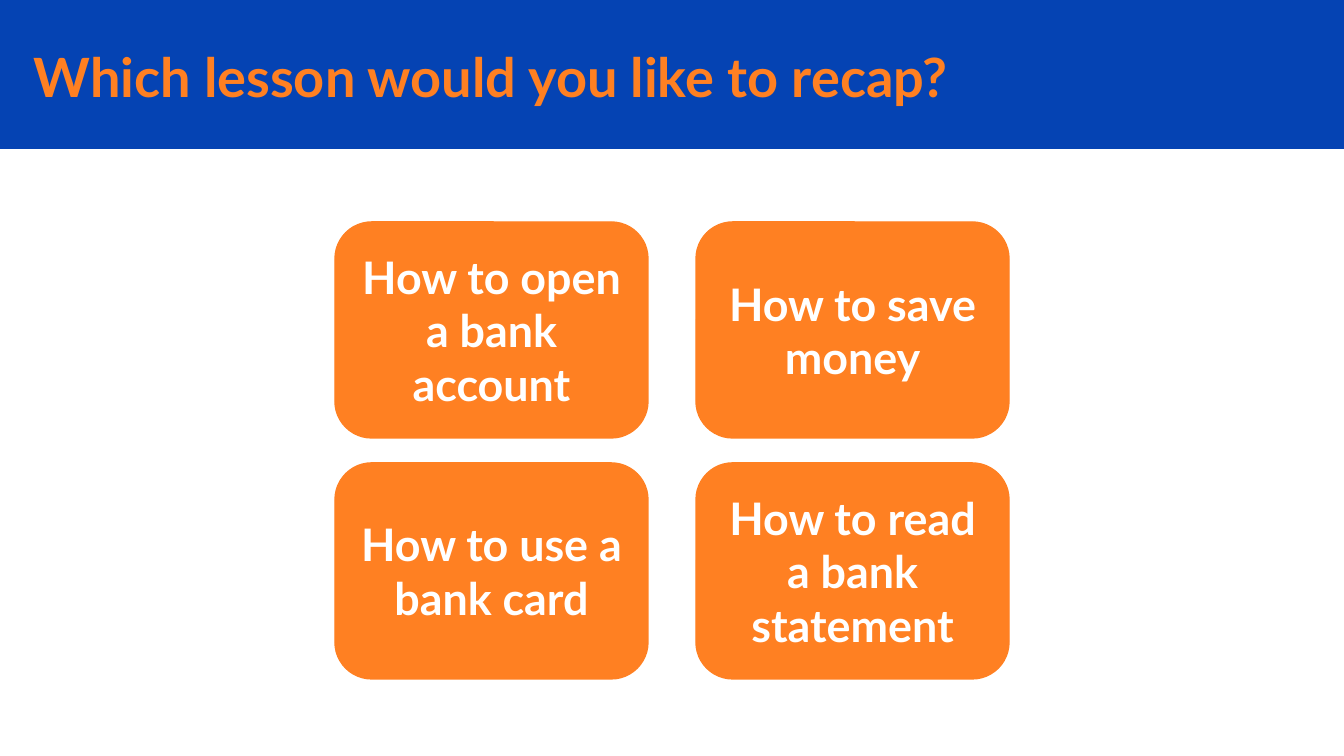
from pptx import Presentation
from pptx.dml.color import RGBColor
from pptx.enum.shapes import MSO_SHAPE
from pptx.enum.text import MSO_ANCHOR, PP_ALIGN
from pptx.util import Inches, Pt

# Content
TITLE = "Which lesson would you like to recap?"
LESSONS = [
    ["How to open a bank account", "How to save money"],
    ["How to use a bank card", "How to read a bank statement"],
]

BLUE = RGBColor(0x05, 0x43, 0xB3)
ORANGE = RGBColor(0xFF, 0x80, 0x22)
WHITE = RGBColor(0xFF, 0xFF, 0xFF)

# Layout in px
PX = 914400 / 134.4
SLIDE_W, SLIDE_H = 1344, 756
BANNER_H = 149
CARD_W, CARD_H = 313, 216
GAP_X, GAP_Y = 48, 25
CARDS_TOP = 222
CARDS_LEFT = (SLIDE_W - 2 * CARD_W - GAP_X) // 2


def px(*lengths):
    return [round(length * PX) for length in lengths]


def write(shape, text, size, color, align):
    frame = shape.text_frame
    frame.word_wrap = True
    frame.vertical_anchor = MSO_ANCHOR.MIDDLE
    frame.margin_left = frame.margin_right = Inches(0.1)
    frame.margin_top = frame.margin_bottom = Inches(0.1)
    paragraph = frame.paragraphs[0]
    paragraph.alignment = align
    paragraph.line_spacing = 1.0
    run = paragraph.add_run()
    run.text = text
    run.font.name = "Lato"
    run.font.size = Pt(size)
    run.font.bold = True
    run.font.color.rgb = color


def add_block(slide, kind, box, color):
    block = slide.shapes.add_shape(kind, *px(*box))
    block.shadow.inherit = False
    block.fill.solid()
    block.fill.fore_color.rgb = color
    return block


prs = Presentation()
prs.slide_width, prs.slide_height = px(SLIDE_W, SLIDE_H)
slide = prs.slides.add_slide(prs.slide_layouts[5])

# Banner, with the title brought in front of it
banner = add_block(slide, MSO_SHAPE.RECTANGLE, (0, 0, SLIDE_W, BANNER_H), BLUE)
banner.line.fill.background()
title = slide.shapes.title
banner._element.addnext(title._element)
title.left, title.top, title.width, title.height = px(20, 38, 1189, 75)
write(title, TITLE, size=29, color=ORANGE, align=PP_ALIGN.LEFT)

# Lesson cards
for row, lessons in enumerate(LESSONS):
    for column, lesson in enumerate(lessons):
        left = CARDS_LEFT + column * (CARD_W + GAP_X)
        top = CARDS_TOP + row * (CARD_H + GAP_Y)
        card = add_block(slide, MSO_SHAPE.ROUNDED_RECTANGLE,
                         (left, top, CARD_W, CARD_H), ORANGE)
        card.adjustments[0] = 0.17
        card.line.color.rgb = ORANGE
        card.line.width = Pt(0.75)
        write(card, lesson, size=24, color=WHITE, align=PP_ALIGN.CENTER)

prs.save("out.pptx")
